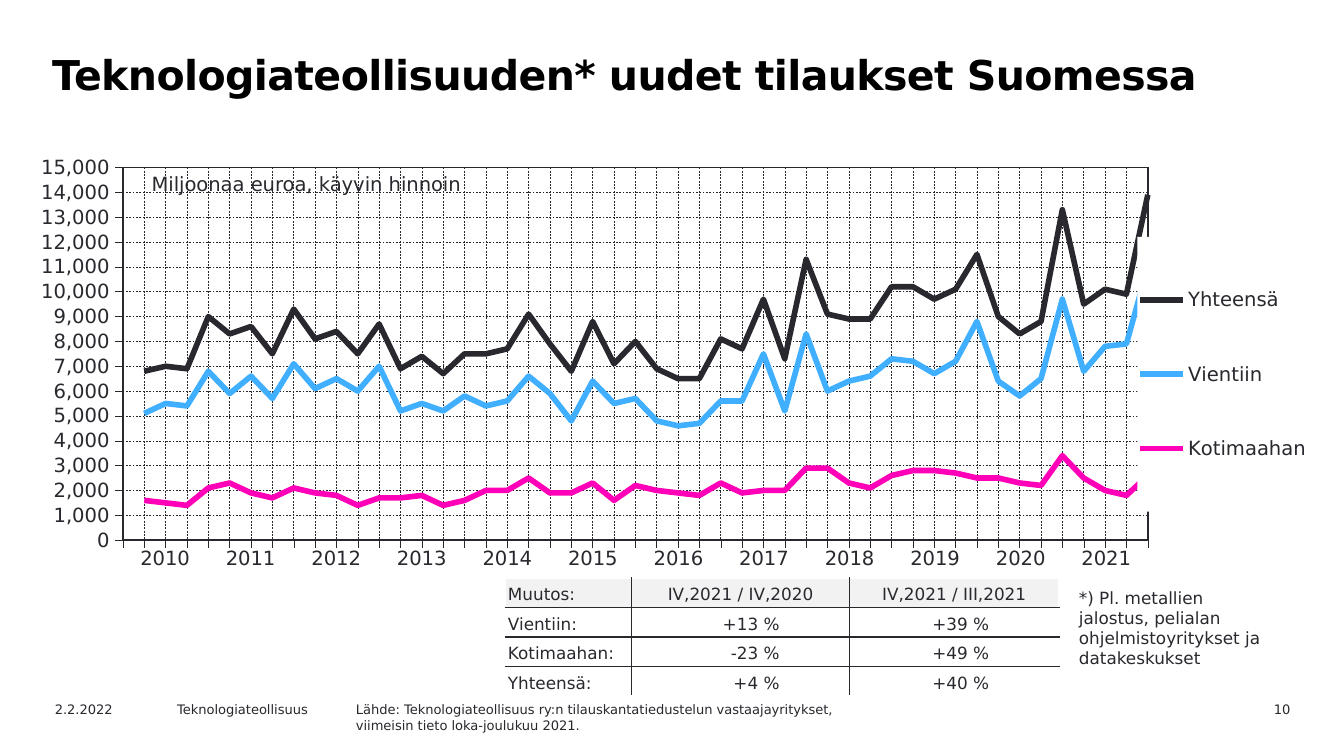
from lxml.etree import SubElement
from pptx import Presentation
from pptx.chart.data import CategoryChartData
from pptx.dml.color import RGBColor
from pptx.enum.chart import XL_CHART_TYPE, XL_LEGEND_POSITION, XL_TICK_LABEL_POSITION, XL_TICK_MARK
from pptx.enum.dml import MSO_LINE
from pptx.enum.text import MSO_ANCHOR, PP_ALIGN
from pptx.oxml import parse_xml
from pptx.oxml.ns import nsdecls, qn
from pptx.util import Inches, Pt

COLORS = {
    "ink": "29282E", "black": "000000", "white": "FFFFFF", "band": "F2F2F2",
    "blue": "40AFFF", "pink": "FF00B8",
}
FONT = "DejaVu Sans"
NO_STYLE = "{2D5ABB26-0587-4C30-8999-92F81FD0307C}"

presentation = Presentation()
presentation.slide_width = Inches(10)
presentation.slide_height = presentation.slide_width * 9 // 16
slide = presentation.slides.add_slide(presentation.slide_layouts[6])
column = presentation.slide_width / 100
row = presentation.slide_height / 56.25


def place(left, top, width, height):
    return [int(length) for length in (left * column, top * row, width * column, height * row)]


def write_text(frame, text, size=7, color="ink", bold=False, align=PP_ALIGN.LEFT,
               wrap=True, line=None, tracking=None):
    frame.word_wrap = wrap
    for index, words in enumerate(text.split("\n")):
        paragraph = frame.add_paragraph() if index else frame.paragraphs[0]
        paragraph.alignment = align
        if line:
            paragraph.line_spacing = Pt(line)
        run = paragraph.add_run()
        run.text = words
        run.font.name = FONT
        run.font.size = Pt(size)
        run.font.bold = bold
        run.font.color.rgb = RGBColor.from_string(COLORS[color])
        if tracking:
            run.font._element.set("spc", str(tracking))


SOURCE = ("Lähde: Teknologiateollisuus ry:n tilauskantatiedustelun vastaajayritykset,\n"
          "viimeisin tieto loka-joulukuu 2021.")
title_format = {"size": 22, "bold": True, "color": "black", "line": 27, "tracking": -32}
for area, text, style in [
    ((2.9, 3.1, 92, 7.1), "Teknologiateollisuuden* uudet tilaukset Suomessa", title_format),
    ((87.6, 51.7, 9.4, 1.8), "10", {"align": PP_ALIGN.RIGHT}),
    ((3.1, 51.7, 10, 1.8), "2.2.2022", {}),
    ((12.2, 51.7, 14.2, 1.8), "Teknologiateollisuus", {}),
    ((25.5, 51.7, 50.7, 1.8), SOURCE, {}),
]:
    write_text(slide.shapes.add_textbox(*place(*area)).text_frame, text, **style)

orders = {
    "Yhteensä": ("ink", [
        None, 6800, 7000, 6900, 9000, 8300, 8600, 7500, 9300, 8100, 8400, 7500, 8700,
        6900, 7400, 6700, 7500, 7500, 7700, 9100, 7900, 6800, 8800, 7100, 8000,
        6900, 6500, 6500, 8100, 7700, 9700, 7300, 11300, 9100, 8900, 8900, 10200,
        10200, 9700, 10100, 11500, 9000, 8300, 8800, 13300, 9500, 10100, 9900, 13900]),
    "Vientiin": ("blue", [
        None, 5100, 5500, 5400, 6800, 5900, 6600, 5700, 7100, 6100, 6500, 6000, 7000,
        5200, 5500, 5200, 5800, 5400, 5600, 6600, 5900, 4800, 6400, 5500, 5700,
        4800, 4600, 4700, 5600, 5600, 7500, 5200, 8300, 6000, 6400, 6600, 7300,
        7200, 6700, 7200, 8800, 6400, 5800, 6500, 9700, 6800, 7800, 7900, 11000]),
    "Kotimaahan": ("pink", [
        None, 1600, 1500, 1400, 2100, 2300, 1900, 1700, 2100, 1900, 1800, 1400, 1700,
        1700, 1800, 1400, 1600, 2000, 2000, 2500, 1900, 1900, 2300, 1600, 2200,
        2000, 1900, 1800, 2300, 1900, 2000, 2000, 2900, 2900, 2300, 2100, 2600,
        2800, 2800, 2700, 2500, 2500, 2300, 2200, 3400, 2500, 2000, 1800, 2600]),
}
chart_data = CategoryChartData()
chart_data.categories = [str(quarter) for quarter in range(1, 47)]
for name, (color, values) in orders.items():
    chart_data.add_series(name, values)
chart = slide.shapes.add_chart(
    XL_CHART_TYPE.LINE, *place(1.2, 11.1, 96.9, 33.3), chart_data).chart
chart.has_title = False
chart.has_legend = True
legend = chart.legend
legend.position = XL_LEGEND_POSITION.RIGHT
legend.include_in_layout = False
chart.plots[0].vary_by_categories = False
for series, (color, values) in zip(chart.plots[0].series, orders.values()):
    series.smooth = False
    series.format.line.width = Pt(3)
    series.format.line.color.rgb = RGBColor.from_string(COLORS[color])

value_axis, category_axis = chart.value_axis, chart.category_axis
for axis in (value_axis, category_axis):
    axis.major_tick_mark = XL_TICK_MARK.OUTSIDE
    axis.has_major_gridlines = True
    axis.major_gridlines.format.line.dash_style = MSO_LINE.DASH
    for line, width in ((axis.format.line, 0.22), (axis.major_gridlines.format.line, 0.25)):
        line.width = Pt(width)
        line.color.rgb = RGBColor.from_string(COLORS["ink"])
category_axis.tick_label_position = XL_TICK_LABEL_POSITION.NONE
value_axis.minimum_scale = 0
value_axis.maximum_scale = 15000
value_axis.major_unit = 1000
value_axis.tick_labels.number_format = "#,##0"
value_axis.tick_labels.number_format_is_linked = False
for font in (chart.font, value_axis.tick_labels.font, legend.font):
    font.name = FONT
    font.size = Pt(10.5)
    font.bold = False
    font.color.rgb = RGBColor.from_string(COLORS["ink"])

value_element = value_axis._element
for element in value_element.findall(qn("c:crossBetween")):
    value_element.remove(element)
value_element.find(qn("c:crosses")).addnext(
    parse_xml(f'<c:crossBetween {nsdecls("c")} val="midCat"/>'))

plot_area = chart._chartSpace.chart.plotArea
legend_element = legend._element
for parent, index, target, percentages in [
    (plot_area, 0, "inner", (8.2, 4.1, 78.7, 83.3)),
    (legend_element, 1, None, (86.1, 19.6, 13.2, 61.4)),
]:
    for element in parent.findall(qn("c:layout")):
        parent.remove(element)
    layout = parse_xml(f'<c:layout {nsdecls("c")}><c:manualLayout/></c:layout>')
    settings = [("layoutTarget", target)] if target else []
    settings += [("xMode", "edge"), ("yMode", "edge")]
    settings += [(tag, percentage / 100) for tag, percentage in zip("xywh", percentages)]
    for tag, value in settings:
        SubElement(layout[0], qn(f"c:{tag}")).set("val", str(value))
    parent.insert(index, layout)
plot_area.append(parse_xml(
    f'<c:spPr {nsdecls("c", "a")}><a:noFill/><a:ln w="12700"><a:solidFill>'
    f'<a:srgbClr val="{COLORS["ink"]}"/></a:solidFill></a:ln></c:spPr>'))
legend_element.find(qn("c:overlay")).addnext(parse_xml(
    f'<c:spPr {nsdecls("c", "a")}><a:solidFill><a:srgbClr val="{COLORS["white"]}"/>'
    '</a:solidFill><a:ln><a:noFill/></a:ln></c:spPr>'))

unit_box = slide.shapes.add_textbox(*place(10.3, 12.3, 26, 2.7))
write_text(unit_box.text_frame, "Miljoonaa euroa, käyvin hinnoin", size=10.5, wrap=False)

changes = [
    ("Muutos:", "IV,2021 / IV,2020", "IV,2021 / III,2021"),
    ("Vientiin:", "+13 %", "+39 %"),
    ("Kotimaahan:", "-23 %", "+49 %"),
    ("Yhteensä:", "+4 %", "+40 %"),
]
change_table = slide.shapes.add_table(4, 3, *place(37.6, 43, 41.2, 8.8)).table
change_table._tbl.tblPr.find(qn("a:tableStyleId")).text = NO_STYLE
for index, width in enumerate((9.4, 16.2, 15.6)):
    change_table.columns[index].width = int(width * column)
for y, texts in enumerate(changes):
    for x, text in enumerate(texts):
        cell = change_table.cell(y, x)
        number = x > 0 and y > 0
        cell.vertical_anchor = MSO_ANCHOR.BOTTOM
        cell.margin_left = cell.margin_top = cell.margin_bottom = Inches(0.02)
        cell.margin_right = Inches(0.52 if number else 0.02)
        align = PP_ALIGN.RIGHT if number else PP_ALIGN.CENTER if x else PP_ALIGN.LEFT
        write_text(cell.text_frame, text, size=9, align=align)
        cell.fill.solid()
        cell.fill.fore_color.rgb = RGBColor.from_string(COLORS["white" if y else "band"])
        inner_sides = {"L": x > 0, "R": x < 2, "T": y > 0, "B": y < 3}
        for index, (side, inner) in enumerate(inner_sides.items()):
            color = COLORS["ink" if inner else "white"]
            cell._tc.get_or_add_tcPr().insert(index, parse_xml(
                f'<a:ln{side} {nsdecls("a")} w="12700"><a:solidFill>'
                f'<a:srgbClr val="{color}"/></a:solidFill></a:ln{side}>'))

note_box = slide.shapes.add_textbox(*place(79.3, 43.2, 16.6, 7.1))
write_text(note_box.text_frame, size=9, text=(
    "*) Pl. metallien jalostus, pelialan ohjelmistoyritykset ja datakeskukset"))

year_table = slide.shapes.add_table(1, 12, *place(9.1, 40.2, 76.4, 3.1)).table
year_table._tbl.tblPr.find(qn("a:tableStyleId")).text = NO_STYLE
for index, cell in enumerate(year_table.iter_cells()):
    cell.fill.background()
    write_text(cell.text_frame, str(2010 + index), size=10.5, align=PP_ALIGN.CENTER)

presentation.save("out.pptx")
